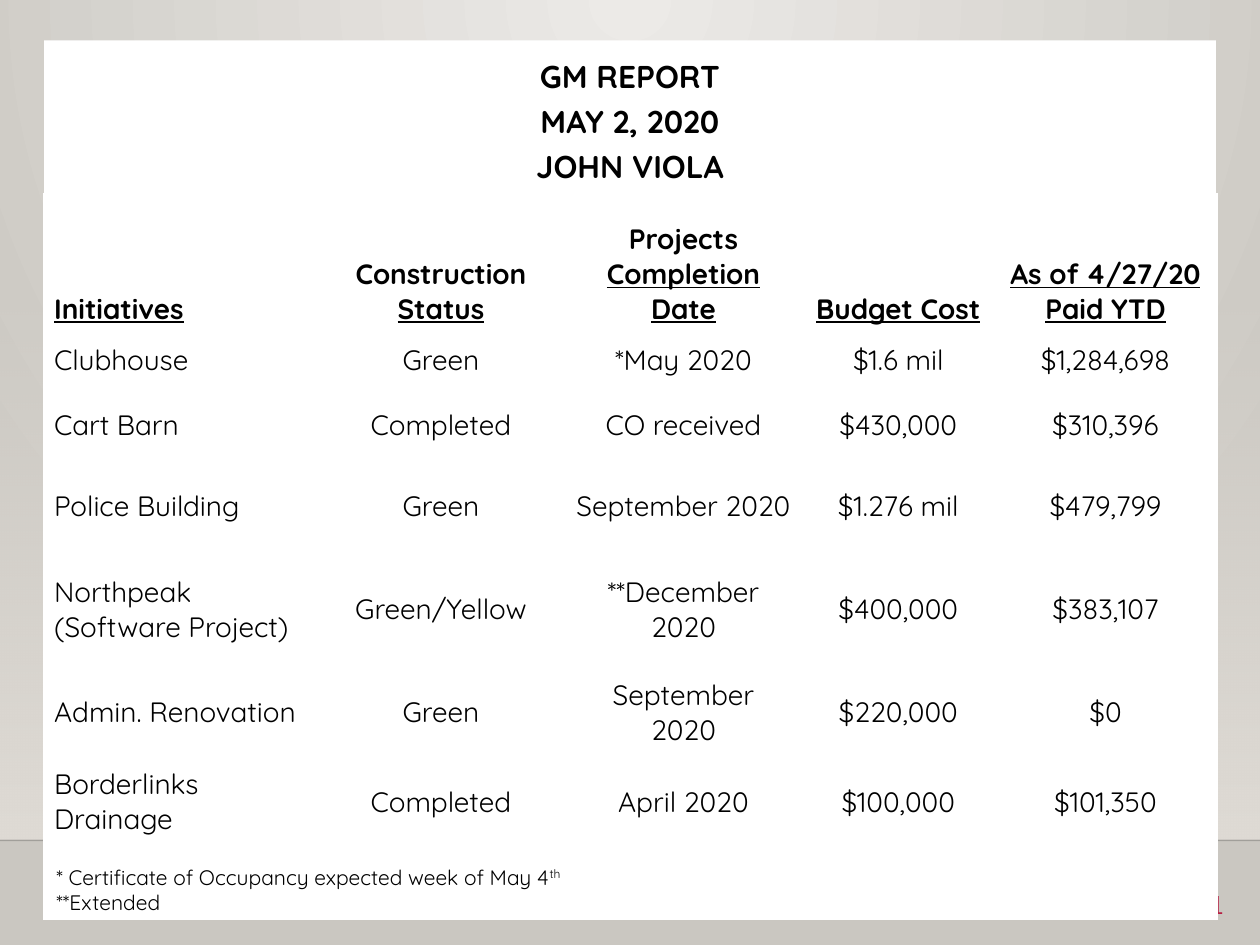
import pptx
import pptx.dml.color
import pptx.enum.shapes
import pptx.enum.text
import pptx.oxml
import pptx.oxml.ns
import pptx.util
from lxml import etree

COLORS = {
    "light": "ECEAE7", "stone": "CAC7C1", "floor": "DFDBD5", "edge": "000001",
    "accent": "B71E42", "ink": "000000", "paper": "FFFFFF",
}
FONT = "Quicksand"
UNDERLINE = ("u", "sng")
SUPERSCRIPT = ("baseline", "30000")
ALIGN = pptx.enum.text.PP_ALIGN
ANCHOR = pptx.enum.text.MSO_ANCHOR

# Underscores enclose the underlined part of a heading.
HEADINGS = ["_Initiatives_", "Construction _Status_", "Projects _Completion Date_",
            "_Budget Cost_", "_As of 4/27/20_\n_Paid YTD_"]
PROJECTS = [
    ["Clubhouse", "Green", "*May 2020", "$1.6 mil", "$1,284,698"],
    ["Cart Barn", "Completed", "CO received", "$430,000", "$310,396"],
    ["Police Building", "Green", "September 2020", "$1.276 mil", "$479,799"],
    ["Northpeak (Software Project)", "Green/Yellow", "**December 2020", "$400,000", "$383,107"],
    ["Admin. Renovation", "Green", "September\n2020", "$220,000", "$0"],
    ["Borderlinks Drainage", "Completed", "April 2020", "$100,000", "$101,350"],
    [""] * 5,
]
COLUMN_WIDTHS = [21.7, 19.6, 18.9, 15.2, 17.7]
ROW_HEIGHTS = [10.9, 4.5, 5.8, 7.1, 9.3, 7.1, 7.1, 5.8]


class ReportSlide:
    """One slide on a grid of 100 columns by 75 rows."""

    def __init__(self, presentation):
        presentation.slide_width = pptx.util.Inches(10)
        presentation.slide_height = pptx.util.Inches(7.5)
        self.unit = presentation.slide_width / 100
        self.slide = presentation.slides.add_slide(presentation.slide_layouts[6])

    def grid(self, *lengths):
        return [pptx.util.Emu(round(length * self.unit)) for length in lengths]

    def color(self, name):
        return pptx.dml.color.RGBColor.from_string(COLORS[name])

    def gradient(self, fill, *names):
        fill.gradient()
        for position, (stop, name) in enumerate(zip(fill.gradient_stops, names)):
            stop.position = position
            stop.color.rgb = self.color(name)

    def opacity(self, element, percent):
        """Set the opacity of the first colour inside an element."""
        color = next(element.iter(pptx.oxml.ns.qn("a:srgbClr")))
        etree.SubElement(color, pptx.oxml.ns.qn("a:alpha"), val=str(percent * 1000))

    def background(self):
        self.gradient(self.slide.background.fill, "light", "stone")
        gradient = next(self.slide.element.iter(pptx.oxml.ns.qn("a:gradFill")))
        gradient.remove(gradient.find(pptx.oxml.ns.qn("a:lin")))
        gradient.append(pptx.oxml.parse_xml(
            f'<a:path {pptx.oxml.ns.nsdecls("a")} path="circle">'
            '<a:fillToRect l="43000" t="0" r="43000" b="100000"/></a:path>'))

    def rectangle(self, *place):
        kind = pptx.enum.shapes.MSO_SHAPE.RECTANGLE
        shape = self.slide.shapes.add_shape(kind, *self.grid(*place))
        shape.shadow.inherit = False
        shape.line.fill.background()
        return shape

    def floor(self, *place):
        shape = self.rectangle(*place)
        self.gradient(shape.fill, "floor", "floor")
        shape.fill.gradient_angle = 270
        self.opacity(shape.element.spPr, 0)

    def line(self, *ends):
        kind = pptx.enum.shapes.MSO_CONNECTOR.STRAIGHT
        line = self.slide.shapes.add_connector(kind, *self.grid(*ends))
        line.line.color.rgb = self.color("edge")
        line.line.width = pptx.util.Pt(1)
        self.opacity(line.element.spPr, 20)
        etree.SubElement(line.element.spPr, pptx.oxml.ns.qn("a:effectLst"))

    def set_text(self, frame, text, size, align=ALIGN.LEFT, bold=False, font=FONT,
                 color="ink", spacing=None, mark=UNDERLINE):
        """Fill a frame, one paragraph a line; parts between underscores get the mark."""
        frame.word_wrap = True
        for index, content in enumerate(text.split("\n")):
            paragraph = frame.add_paragraph() if index else frame.paragraphs[0]
            paragraph.alignment = align
            paragraph.line_spacing = spacing
            for number, part in enumerate(content.split("_")):
                if not part:
                    continue
                run = paragraph.add_run()
                run.text = part
                run.font.name = font
                run.font.size = pptx.util.Pt(size)
                run.font.bold = bold
                run.font.color.rgb = self.color(color)
                if number % 2:
                    run._r.get_or_add_rPr().set(*mark)

    def title(self, text, *place):
        shape = self.rectangle(*place)
        shape.fill.solid()
        shape.fill.fore_color.rgb = self.color("paper")
        shape.text_frame.vertical_anchor = ANCHOR.MIDDLE
        self.set_text(shape.text_frame, text, 18, ALIGN.CENTER, bold=True, spacing=1.2)

    def text(self, text, place, size, anchor=ANCHOR.TOP, **style):
        frame = self.slide.shapes.add_textbox(*self.grid(*place)).text_frame
        frame.vertical_anchor = anchor
        self.set_text(frame, text, size, **style)

    def table(self, rows, left, top):
        place = self.grid(left, top, sum(COLUMN_WIDTHS), sum(ROW_HEIGHTS))
        table = self.slide.shapes.add_table(len(rows), len(rows[0]), *place).table
        table.first_row = table.horz_banding = False
        for column, width in zip(table.columns, self.grid(*COLUMN_WIDTHS)):
            column.width = width
        for row, height in zip(table.rows, self.grid(*ROW_HEIGHTS)):
            row.height = height
        for row_index, row in enumerate(rows):
            heading = row_index == 0
            for column_index, text in enumerate(row):
                cell = table.cell(row_index, column_index)
                cell.fill.solid()
                cell.fill.fore_color.rgb = self.color("paper")
                cell.margin_left = cell.margin_right = pptx.util.Inches(0.08)
                cell.margin_top = cell.margin_bottom = pptx.util.Inches(0.04)
                cell.vertical_anchor = ANCHOR.BOTTOM if heading else ANCHOR.MIDDLE
                align = ALIGN.CENTER if column_index else ALIGN.LEFT
                self.set_text(cell.text_frame, text, 16, align, bold=heading)


def main():
    presentation = pptx.Presentation()
    report = ReportSlide(presentation)
    report.background()
    report.floor(0, 22, 100, 44.6)
    report.line(0, 66.7, 100, 66.7)
    report.text("11", (91.4, 69.7, 6.7, 4.4), 16, ANCHOR.MIDDLE, align=ALIGN.RIGHT,
                font="Calibri", color="accent", spacing=0.9)
    report.title("GM REPORT\nMAY 2, 2020\nJOHN VIOLA", 3.5, 3.2, 93, 12.2)
    report.table([HEADINGS] + PROJECTS, 3.5, 15.4)
    report.text("* Certificate of Occupancy expected week of May 4_th_\n**Extended",
                (3.5, 68.1, 66.7, 7.4), 12, mark=SUPERSCRIPT)
    presentation.save("out.pptx")


if __name__ == "__main__":
    main()
